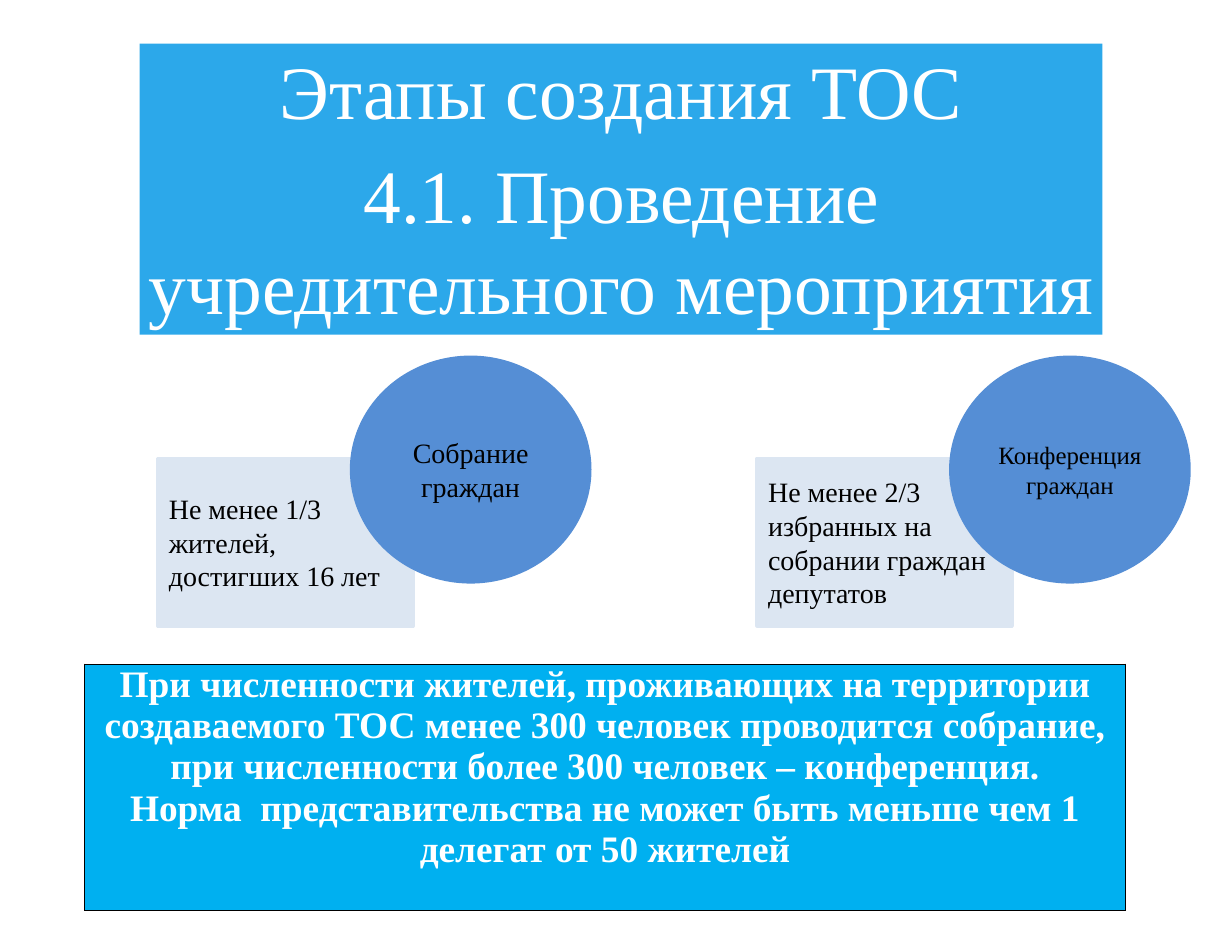
from lxml import etree
from pptx import Presentation
from pptx import util as u
from pptx.dml.color import RGBColor
from pptx.enum import shapes, text
from pptx.oxml.ns import qn

FONT = "Times New Roman"
WHITE = RGBColor(0xFF, 0xFF, 0xFF)
BLACK = RGBColor(0, 0, 0)
TITLE_BLUE = RGBColor(0x2C, 0xA8, 0xEA)
RULE_BLUE = RGBColor(0x00, 0xB0, 0xF0)
CIRCLE_BLUE = RGBColor(0x55, 0x8E, 0xD5)
PALE_BLUE = RGBColor(0xDC, 0xE6, 0xF2)

EVENT_STEP = 13.59
EVENTS = [
    ("Собрание граждан", 18, "Не менее 1/3 жителей, достигших 16 лет"),
    ("Конференция граждан", 16,
     "Не менее 2/3 избранных на собрании граждан депутатов"),
]


def write(frame, *lines, size, color=BLACK, bold=False,
          align=text.PP_ALIGN.CENTER, after=0):
    frame.word_wrap = True
    for index, line in enumerate(lines):
        paragraph = frame.add_paragraph() if index else frame.paragraphs[0]
        paragraph.alignment = align
        paragraph.space_after = u.Pt(after)
        run = paragraph.add_run()
        run.text = line
        run.font.name = FONT
        run.font.size = u.Pt(size)
        run.font.bold = bold
        run.font.color.rgb = color


def add_block(slide, kind, box, fill, outlined=True):
    block = slide.shapes.add_shape(kind, *map(u.Cm, box))
    block.shadow.inherit = False
    block.fill.solid()
    block.fill.fore_color.rgb = fill
    if outlined:
        block.line.color.rgb = fill
        block.line.width = u.Pt(2)
    else:
        block.line.fill.background()
    block.text_frame.vertical_anchor = text.MSO_ANCHOR.MIDDLE
    return block.text_frame


def add_title(slide):
    title = add_block(slide, shapes.MSO_SHAPE.RECTANGLE,
                      (3.17, 0.99, 21.83, 6.6), TITLE_BLUE, outlined=False)
    title.vertical_anchor = text.MSO_ANCHOR.TOP
    title.margin_left = title.margin_right = 0
    title.margin_top = title.margin_bottom = 0
    write(title, "Этапы создания ТОС",
          "4.1. Проведение учредительного мероприятия",
          size=48.5, color=WHITE, after=9.2)


def add_events(slide):
    for index, (_, _, quorum) in enumerate(EVENTS):
        quorum_box = add_block(slide, shapes.MSO_SHAPE.RECTANGLE,
                               (3.58 + index * EVENT_STEP, 10.39, 5.79, 3.81),
                               PALE_BLUE)
        write(quorum_box, quorum, size=18, align=text.PP_ALIGN.LEFT)
    for index, (event, size, _) in enumerate(EVENTS):
        circle = add_block(slide, shapes.MSO_SHAPE.OVAL,
                           (7.97 + index * EVENT_STEP, 8.1, 5.41, 5.1),
                           CIRCLE_BLUE)
        write(circle, event, size=size)


def outline_cell(cell):
    properties = cell._tc.get_or_add_tcPr()
    for position, side in enumerate(("a:lnL", "a:lnR", "a:lnT", "a:lnB")):
        border = etree.Element(qn(side), w=str(u.Pt(0.75)))
        fill = etree.SubElement(border, qn("a:solidFill"))
        etree.SubElement(fill, qn("a:srgbClr"), val=str(BLACK))
        properties.insert(position, border)


def add_rule_table(slide):
    table = slide.shapes.add_table(
        1, 1, u.Cm(1.92), u.Cm(15.06), u.Cm(23.6), u.Cm(5.6)).table
    rule = table.cell(0, 0)
    rule.margin_left = rule.margin_right = 0
    rule.margin_top = rule.margin_bottom = 0
    rule.vertical_anchor = text.MSO_ANCHOR.TOP
    rule.fill.solid()
    rule.fill.fore_color.rgb = RULE_BLUE
    outline_cell(rule)
    write(rule.text_frame,
          "При численности жителей, проживающих на территории создаваемого "
          "ТОС менее 300 человек проводится собрание, при численности более "
          "300 человек – конференция.",
          "Норма  представительства не может быть меньше чем 1 делегат "
          "от 50 жителей",
          size=24, color=WHITE, bold=True)


def main():
    deck = Presentation()
    deck.slide_width = u.Cm(27.94)
    deck.slide_height = u.Cm(21.59)
    slide = deck.slides.add_slide(deck.slide_layouts[6])
    add_rule_table(slide)
    add_title(slide)
    add_events(slide)
    deck.save("out.pptx")


if __name__ == "__main__":
    main()
